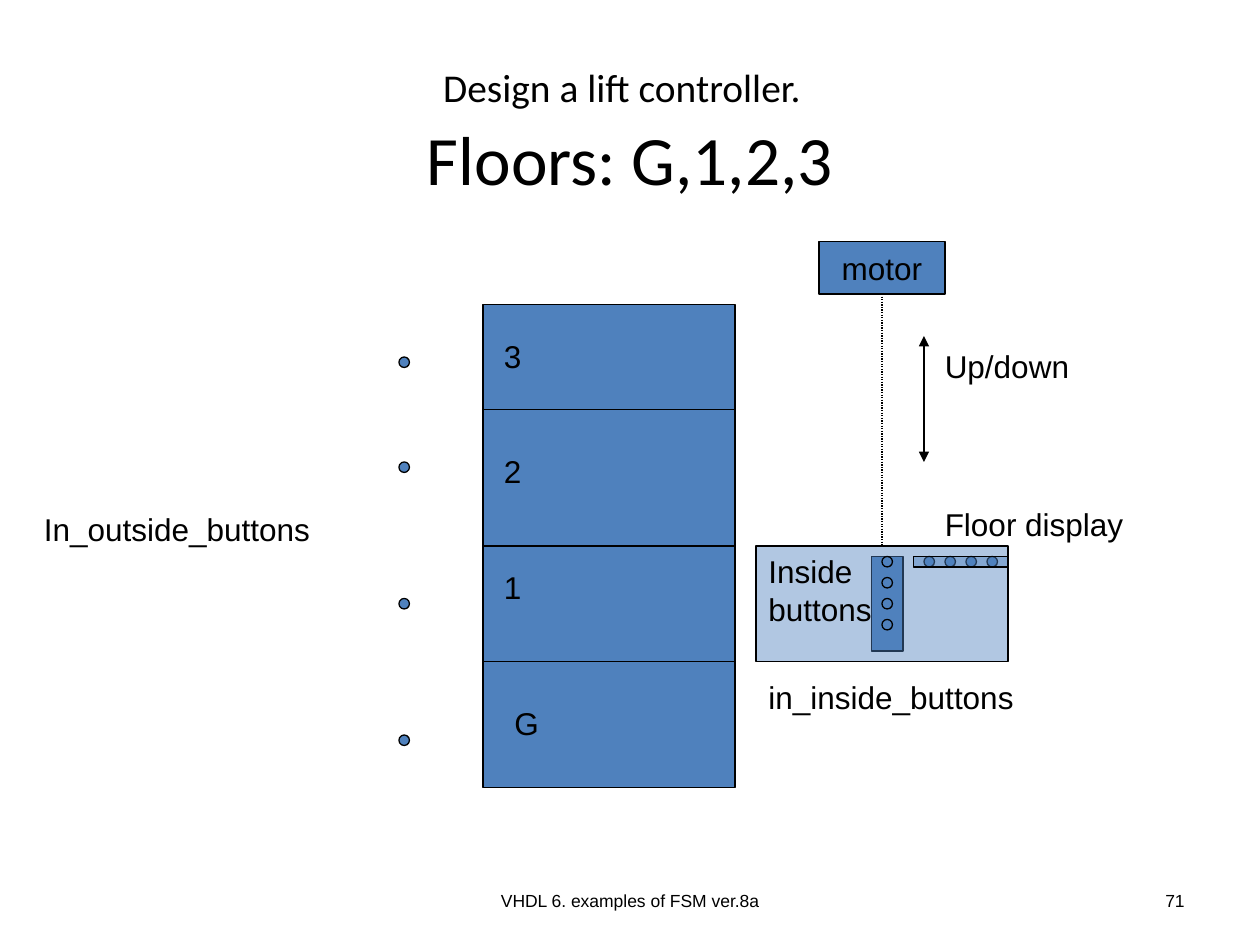
from dataclasses import dataclass
from typing import Optional

from lxml import etree
from pptx import Presentation
from pptx.dml.color import RGBColor
from pptx.enum.dml import MSO_LINE
from pptx.enum.shapes import MSO_CONNECTOR, MSO_SHAPE
from pptx.enum.text import MSO_ANCHOR, MSO_AUTO_SIZE, PP_ALIGN
from pptx.oxml.ns import qn
from pptx.util import Inches, Pt

RECT, OVAL = MSO_SHAPE.RECTANGLE, MSO_SHAPE.OVAL
LEFT, MID, RIGHT = PP_ALIGN.LEFT, PP_ALIGN.CENTER, PP_ALIGN.RIGHT
TOP, MIDDLE = MSO_ANCHOR.TOP, MSO_ANCHOR.MIDDLE
DOTS = MSO_LINE.ROUND_DOT
FIT = MSO_AUTO_SIZE.SHAPE_TO_FIT_TEXT
STRAIGHT = MSO_CONNECTOR.STRAIGHT

COLS, ROWS = 120, 90
WIDE, HIGH = Inches(10), Inches(7.5)


@dataclass(frozen=True)
class Theme:
    blue: RGBColor = RGBColor(0x4F, 0x81, 0xBD)
    ink: RGBColor = RGBColor(0, 0, 0)
    head: str = "Calibri"
    body: str = "Arial"
    lead: float = 22.5
    big: float = 39.6
    label: float = 18
    foot: float = 10
    line: float = 0.75


@dataclass(frozen=True)
class Box:
    col: float
    row: float
    wide: float
    high: float


@dataclass(frozen=True)
class Label:
    text: str
    box: Box
    wrap: bool = False


@dataclass(frozen=True)
class Wire:
    col: float
    row: float
    end_col: float
    end_row: float
    dash: Optional[MSO_LINE] = None
    heads: bool = False


THEME = Theme()
SHAFT = Box(46, 29, 24, 46)
CAR = Box(72, 52, 24, 11)
PANEL = Box(83, 53, 3, 9)
SCREEN = Box(87, 53, 9, 1)
MOTOR = Box(78, 23, 12, 5)
SLABS = (39, 52, 63)
FLOORS = (
    Label("G", Box(47.8, 66.5, 4.8, 4.8)),
    Label("1", Box(46.8, 53.5, 4.1, 4.8)),
    Label("2", Box(46.8, 42.5, 4.1, 4.8)),
    Label("3", Box(46.8, 31.5, 4.1, 4.8)),
)
NOTES = (
    Label("In_outside_buttons", Box(3, 48, 28.2, 4.8)),
    Label("in_inside_buttons", Box(72, 64, 26, 4.8)),
    Label("Inside buttons", Box(72, 52, 21, 8.4), wrap=True),
    Label("Up/down", Box(88.8, 32.5, 14.4, 4.8)),
    Label("Floor display", Box(88.8, 47.5, 19.6, 4.8)),
)
CALLS = [(38, row) for row in (70, 57, 44, 34)]
KEYS = [(84, 53 + 2 * step) for step in range(4)]
LAMPS = [(88 + 2 * step, 53) for step in range(4)]


def across(col: float) -> int:
    return round(WIDE * col / COLS)


def down(row: float) -> int:
    return round(HIGH * row / ROWS)


def place(box: Box) -> tuple:
    return across(box.col), down(box.row), across(box.wide), down(box.high)


def style(run, size: float, face: str = THEME.body) -> None:
    run.font.size = Pt(size)
    run.font.name = face
    run.font.color.rgb = THEME.ink


def write(frame, text: str, size: float, align=LEFT, anchor=TOP, wrap=False) -> None:
    frame.text = text
    frame.word_wrap = wrap
    frame.vertical_anchor = anchor
    for part in frame.paragraphs:
        part.alignment = align
        for run in part.runs:
            style(run, size)


def draw_shape(slide, kind, box: Box, share: int = 100):
    shape = slide.shapes.add_shape(kind, *place(box))
    shape.shadow.inherit = False
    shape.fill.solid()
    shape.fill.fore_color.rgb = THEME.blue
    shape.line.color.rgb = THEME.ink
    shape.line.width = Pt(THEME.line)
    if share < 100:
        tint = shape._element.spPr.find(qn("a:solidFill"))[0]
        etree.SubElement(tint, qn("a:alpha"), val=str(share * 1000))
    return shape


def draw_dots(slide, spots: list) -> None:
    for col, row in spots:
        draw_shape(slide, OVAL, Box(col, row, 1, 1))


def draw_wire(slide, wire: Wire) -> None:
    link = slide.shapes.add_connector(
        STRAIGHT, across(wire.col), down(wire.row),
        across(wire.end_col), down(wire.end_row))
    link.line.color.rgb = THEME.ink
    link.line.width = Pt(THEME.line)
    if wire.dash is not None:
        link.line.dash_style = wire.dash
    props = link._element.spPr
    if wire.heads:
        for tip in ("a:headEnd", "a:tailEnd"):
            etree.SubElement(props.find(qn("a:ln")), qn(tip), type="triangle")
    etree.SubElement(props, qn("a:effectLst"))


def draw_label(slide, label: Label) -> None:
    frame = slide.shapes.add_textbox(*place(label.box)).text_frame
    write(frame, label.text, THEME.label, wrap=label.wrap)
    frame.auto_size = FIT


def draw_foot(slide, text: str, box: Box, align) -> None:
    frame = slide.shapes.add_textbox(*place(box)).text_frame
    write(frame, text, THEME.foot, align, MIDDLE, True)


def draw_title(slide) -> None:
    frame = slide.shapes.add_textbox(*place(Box(6, 3.6, 108, 15))).text_frame
    write(frame, "Design a lift controller.", THEME.lead, MID, MIDDLE, True)
    part = frame.paragraphs[0]
    style(part.runs[0], THEME.lead, THEME.head)
    gap = part.add_run()
    gap.text = " "
    part.add_line_break()
    main_run = part.add_run()
    main_run.text = "Floors: G,1,2,3"
    for run in (gap, main_run):
        style(run, THEME.big, THEME.head)


def main() -> None:
    deck = Presentation()
    deck.slide_width, deck.slide_height = WIDE, HIGH
    slide = deck.slides.add_slide(deck.slide_layouts[6])
    draw_title(slide)
    draw_foot(slide, "VHDL 6. examples of FSM ver.8a", Box(41, 83.4, 38, 4.8), MID)
    draw_foot(slide, "71", Box(86, 83.4, 28, 4.8), RIGHT)
    draw_shape(slide, RECT, PANEL)
    draw_shape(slide, RECT, CAR, 44)
    draw_shape(slide, RECT, SHAFT)
    for row in SLABS:
        draw_wire(slide, Wire(SHAFT.col, row, SHAFT.col + SHAFT.wide, row))
    draw_dots(slide, CALLS + KEYS)
    for label in FLOORS + NOTES:
        draw_label(slide, label)
    draw_wire(slide, Wire(84, 28, 84, 52, dash=DOTS))
    draw_wire(slide, Wire(88, 32, 88, 44, heads=True))
    draw_dots(slide, LAMPS)
    draw_shape(slide, RECT, SCREEN, 45)
    motor = draw_shape(slide, RECT, MOTOR)
    write(motor.text_frame, "motor", THEME.label, MID, MIDDLE)
    deck.save("out.pptx")


if __name__ == "__main__":
    main()
